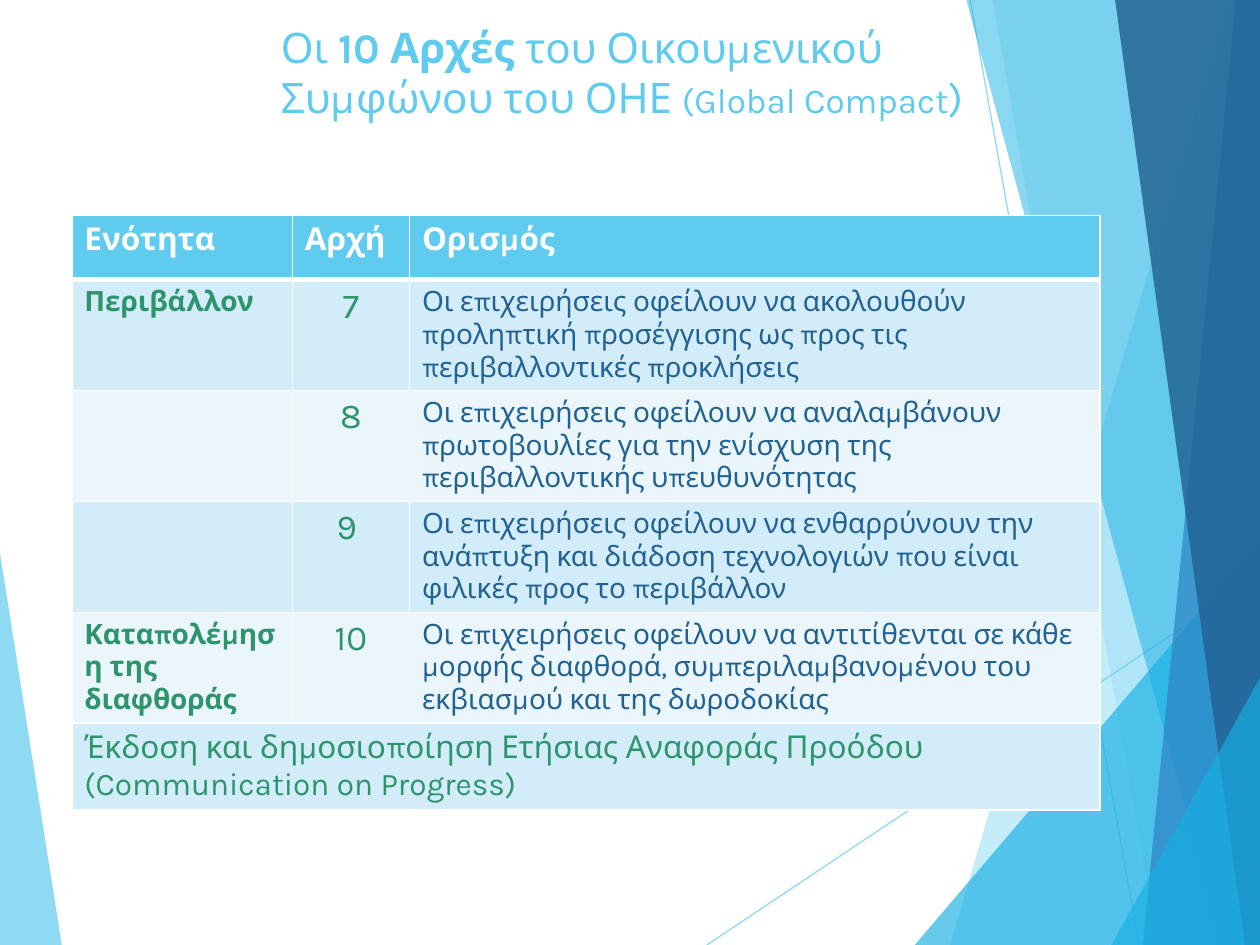
from pptx import Presentation
from pptx.dml.color import RGBColor
from pptx.enum import shapes, text
from pptx.oxml import parse_xml
from pptx.oxml.ns import nsdecls, qn
from pptx.util import Inches, Pt
from lxml import etree

FONT = "Karla"
SKY = RGBColor(0x5F, 0xCB, 0xEF)
CYAN = RGBColor(0x17, 0xB0, 0xE4)
BLUE = RGBColor(0x2E, 0x83, 0xC3)
NAVY = RGBColor(0x22, 0x62, 0x92)
GREEN = RGBColor(0x2E, 0x94, 0x6B)
WHITE = RGBColor(0xFF, 0xFF, 0xFF)
BANDS = RGBColor(0xD2, 0xEC, 0xF9), RGBColor(0xEA, 0xF6, 0xFC)

TITLE = [
    ("Οι ", 24, False),
    ("10 Αρχές ", 24, True),
    ("του Οικουμενικού Συμφώνου του ΟΗΕ ", 24, False),
    ("(Global Compact", 20, False),
    (")", 24, False),
]
HEADS = ["Ενότητα", "Αρχή", "Ορισμός"]
ROWS = [
    ("Περιβάλλον", "7",
     "Οι επιχειρήσεις οφείλουν να ακολουθούν προληπτική προσέγγισης "
     "ως προς τις περιβαλλοντικές προκλήσεις"),
    ("", "8",
     "Οι επιχειρήσεις οφείλουν να αναλαμβάνουν πρωτοβουλίες για την "
     "ενίσχυση της περιβαλλοντικής υπευθυνότητας"),
    ("", "9 ",
     "Οι επιχειρήσεις οφείλουν να ενθαρρύνουν την ανάπτυξη και διάδοση "
     "τεχνολογιών που είναι φιλικές προς το περιβάλλον"),
    ("Καταπολέμηση της διαφθοράς", "10",
     "Οι επιχειρήσεις οφείλουν να αντιτίθενται σε κάθε μορφής διαφθορά, "
     "συμπεριλαμβανομένου του εκβιασμού και της δωροδοκίας"),
]
FOOT = ("Έκδοση και δημοσιοποίηση Ετήσιας Αναφοράς Προόδου "
        "(Communication on Progress)")
COLS = [1.75, 0.93, 5.48]
HEIGHTS = [0.51] + [0.88] * len(ROWS) + [0.69]

# Corner points, colour, opacity in percent
LEFT = [([(0, 4.39), (0.49, 7.5), (0, 7.5)], SKY, 70)]
RAYS = [((5.61, 7.5), (10, 4.57)), ((7.7, 0), (9.04, 7.5))]
RIGHT = [
    ([(9.75, 0), (7.54, 7.5), (10, 7.5), (10, 0)], SKY, 36),
    ([(7.88, 0), (9.19, 7.5), (10, 7.5), (10, 0)], SKY, 20),
    ([(7.26, 7.5), (10, 4.29), (10, 7.5)], CYAN, 66),
    ([(7.67, 0), (9.7, 7.5), (10, 7.5), (10, 0)], CYAN, 50),
    ([(9.81, 0), (9.07, 7.5), (10, 7.5), (10, 0)], BLUE, 70),
    ([(8.85, 0), (9.88, 7.5), (10, 7.5), (10, 0)], NAVY, 82),
    ([(8.82, 7.5), (10, 5.38), (10, 7.5)], CYAN, 66),
]


def fade(part, rate):
    """Set the opacity of the one solid colour of a fill or line."""
    tint = next(part.iter(qn("a:srgbClr")))
    etree.SubElement(tint, qn("a:alpha"), val=str(rate * 1000))


def shard(slide, points, color, rate):
    spots = [(Inches(x), Inches(y)) for x, y in points]
    pen = slide.shapes.build_freeform(*spots[0])
    pen.add_line_segments(spots[1:], close=True)
    shape = pen.convert_to_shape()
    shape.shadow.inherit = False
    shape.line.fill.background()
    shape.fill.solid()
    shape.fill.fore_color.rgb = color
    fade(shape._element.spPr, rate)


def ray(slide, start, end):
    line = slide.shapes.add_connector(
        shapes.MSO_CONNECTOR.STRAIGHT, *map(Inches, start + end))
    line.line.color.rgb = SKY
    line.line.width = Pt(0.75)
    fade(line._element.spPr, 70)
    etree.SubElement(line._element.spPr, qn("a:effectLst"))


def write(para, words, size=16, color=GREEN, bold=False,
          align=text.PP_ALIGN.LEFT):
    para.alignment = align
    run = para.add_run()
    run.text = words
    font = run.font
    font.name, font.size, font.bold = FONT, Pt(size), bold
    font.color.rgb = color


def edge(cell, base=1):
    """Draw white borders, the bottom one base points wide."""
    for side in "LRTB":
        width = Pt(base if side == "B" else 1)
        cell._tc.get_or_add_tcPr().append(parse_xml(
            f'<a:ln{side} {nsdecls("a")} w="{width}"><a:solidFill>'
            f'<a:srgbClr val="{WHITE}"/></a:solidFill></a:ln{side}>'))


def fill_table(table):
    for col, width in zip(table.columns, COLS):
        col.width = Inches(width)
    for row, high in zip(table.rows, HEIGHTS):
        row.height = Inches(high)
    for r, row in enumerate(table.rows):
        for cell in row.cells:
            edge(cell, 1 if r else 3)
            cell.fill.solid()
            cell.fill.fore_color.rgb = BANDS[(r - 1) % 2] if r else SKY

    def put(r, c, words, **look):
        if words:
            write(table.cell(r, c).text_frame.paragraphs[0], words, **look)

    for c, head in enumerate(HEADS):
        put(0, c, head, size=18, color=WHITE, bold=True)
    for r, (unit, number, rule) in enumerate(ROWS, 1):
        put(r, 0, unit, bold=True)
        put(r, 1, number, size=20, align=text.PP_ALIGN.CENTER)
        put(r, 2, rule, color=NAVY)
    last = len(ROWS) + 1
    table.cell(last, 0).merge(table.cell(last, len(COLS) - 1))
    put(last, 0, FOOT, size=18)


def main():
    deck = Presentation()
    deck.slide_width, deck.slide_height = Inches(10), Inches(7.5)
    slide = deck.slides.add_slide(deck.slide_layouts[5])

    for points, color, rate in LEFT:
        shard(slide, points, color, rate)
    for start, end in RAYS:
        ray(slide, start, end)
    for points, color, rate in RIGHT:
        shard(slide, points, color, rate)

    title = slide.shapes.title
    slide.shapes._spTree.append(title._element)  # in front of the shards
    title.left, title.top = Inches(2.13), Inches(0.12)
    title.width, title.height = Inches(5.8), Inches(1.37)
    frame = title.text_frame
    frame.word_wrap = True
    frame.auto_size = text.MSO_AUTO_SIZE.NONE
    frame.vertical_anchor = text.MSO_ANCHOR.TOP
    for words, size, bold in TITLE:
        write(frame.paragraphs[0], words, size=size, color=SKY, bold=bold)

    grid = slide.shapes.add_table(
        len(HEIGHTS), len(COLS), Inches(0.57), Inches(1.71),
        Inches(sum(COLS)), Inches(sum(HEIGHTS)))
    fill_table(grid.table)
    deck.save("out.pptx")


if __name__ == "__main__":
    main()
